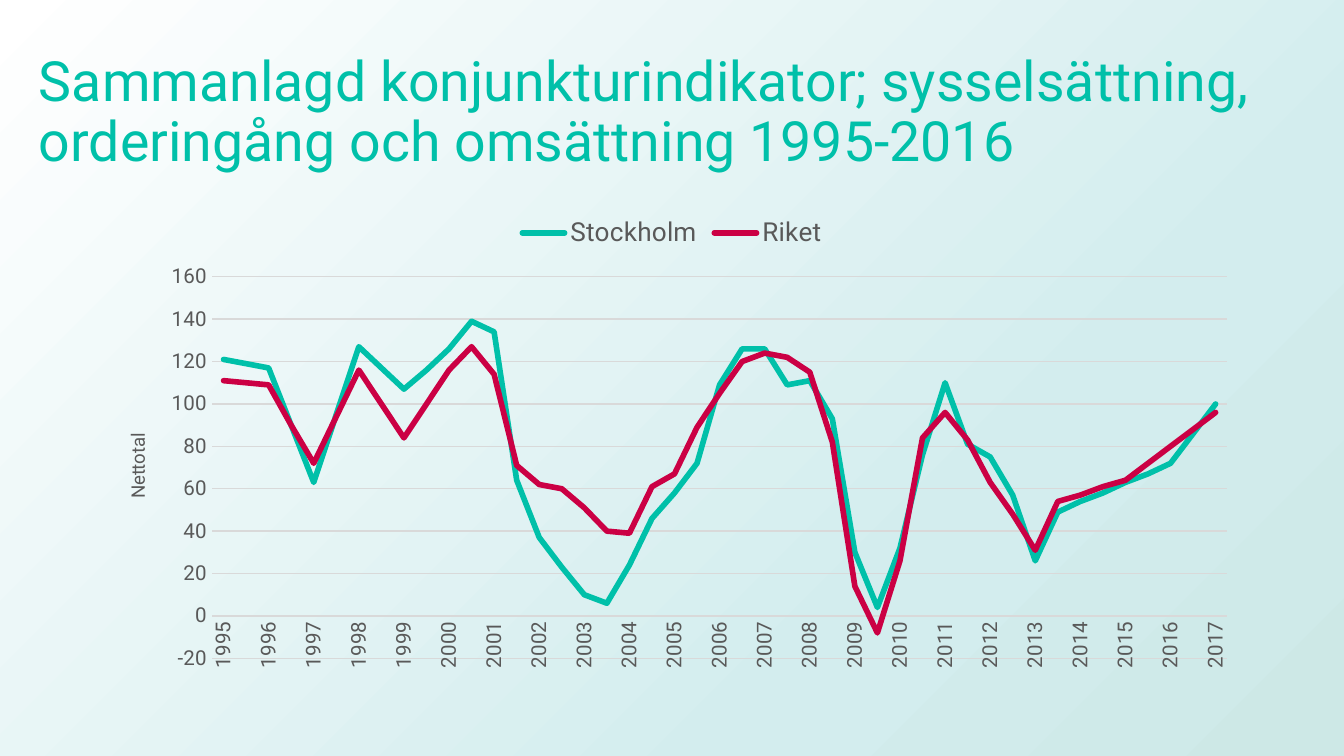
from copy import deepcopy
from dataclasses import dataclass

from pptx import Presentation
from pptx.chart.data import CategoryChartData
from pptx.dml.color import RGBColor
from pptx.enum.chart import XL_CHART_TYPE as ChartType
from pptx.enum.chart import XL_LEGEND_POSITION as LegendPosition
from pptx.enum.chart import XL_TICK_MARK as TickMark
from pptx.enum.text import MSO_ANCHOR as Anchor
from pptx.enum.text import MSO_AUTO_SIZE as AutoSize
from pptx.enum.text import PP_ALIGN as Align
from pptx.oxml import parse_xml
from pptx.oxml.ns import nsdecls, qn
from pptx.util import Inches, Pt


@dataclass(frozen=True)
class Theme:
    """Colours, font and type sizes of the slide."""
    font: str = "Roboto"
    teal: str = "00C0A9"
    crimson: str = "CB0044"
    label: str = "595959"
    grid: str = "D9D9D9"
    backdrop: tuple = ((0, "FFFFFF"), (0.7, "D3EDEE"), (1, "CDE8E6"))
    title_size: float = 29.7
    legend_size: float = 14
    tick_size: float = 11
    axis_title_size: float = 10
    rule: float = 0.75
    curve: float = 3


THEME = Theme()
WIDTH = Inches(10)
HEIGHT = WIDTH * 9 // 16
CHART_WIDTH, CHART_HEIGHT = 8.62, 3.56
TITLE = ("Sammanlagd konjunkturindikator; sysselsättning, "
         "orderingång och omsättning 1995-2016")
STOCKHOLM = (121, 119, 117, 90, 63, 95, 127, 117, 107, 116, 126, 139, 134, 64, 37,
             23, 10, 6, 24, 46, 58, 72, 109, 126, 126, 109, 111, 93, 30, 4,
             32, 76, 110, 81, 75, 57, 26, 49, 54, 58, 63, 67, 72, 86, 100)
RIKET = (111, 110, 109, 90, 72, 94, 116, 100, 84, 100, 116, 127, 114, 71, 62,
         60, 51, 40, 39, 61, 67, 89, 105, 120, 124, 122, 115, 82, 14, -8,
         26, 84, 96, 83, 63, 48, 31, 54, 57, 61, 64, 72, 80, 88, 96)
CURVES = (("Stockholm", STOCKHOLM, THEME.teal), ("Riket", RIKET, THEME.crimson))
READINGS_PER_YEAR = 2
UPRIGHT = "-5400000"


def box(left, top, width, height):
    """Turn lengths in tenths of the slide width into a position and size."""
    return tuple(int(length * WIDTH / 10) for length in (left, top, width, height))


def style_font(font, size, color):
    """Apply the theme font with a size and colour."""
    font.name, font.size, font.bold = THEME.font, Pt(size), False
    font.color.rgb = RGBColor.from_string(color)


def style_line(line, width, color):
    """Give a line a width and a solid colour."""
    line.width = Pt(width)
    line.color.rgb = RGBColor.from_string(color)


def paint_background(slide):
    """Fill the slide with a diagonal gradient."""
    fill = slide.background.fill
    fill.gradient()
    fill.gradient_angle = 315
    first_stop = slide.element.xpath(".//a:gsLst/a:gs")[0]
    first_stop.addnext(deepcopy(first_stop))
    for stop, (position, color) in zip(fill.gradient_stops, THEME.backdrop):
        stop.position = position
        stop.color.rgb = RGBColor.from_string(color)


def write_title(slide):
    """Place and format the slide title."""
    title = slide.shapes.title
    title.left, title.top, title.width, title.height = box(0.19, 0.3, 10.02, 1.09)
    frame = title.text_frame
    frame.text = TITLE
    frame.word_wrap = True
    frame.auto_size = AutoSize.NONE
    frame.vertical_anchor = Anchor.MIDDLE
    heading = frame.paragraphs[0]
    heading.alignment = Align.LEFT
    heading.line_spacing = 0.9
    style_font(heading.font, THEME.title_size, THEME.teal)


def set_layout(parent, index, inner=False, **shares):
    """Fix a chart part at shares of the chart area."""
    old = parent.find(qn("c:layout"))
    if old is not None:
        parent.remove(old)
    target = '<c:layoutTarget val="inner"/>' if inner else ""
    modes = '<c:xMode val="edge"/><c:yMode val="edge"/>'
    values = "".join(f'<c:{key} val="{share:.4f}"/>' for key, share in shares.items())
    parent.insert(index, parse_xml(
        f'<c:layout {nsdecls("c")}><c:manualLayout>{target}{modes}{values}'
        "</c:manualLayout></c:layout>"))


def format_years(chart):
    """Show each year once, upright, along the zero line."""
    years = chart.category_axis
    years.major_tick_mark = years.minor_tick_mark = TickMark.NONE
    style_font(years.tick_labels.font, THEME.tick_size, THEME.label)
    style_line(years.format.line, THEME.rule, THEME.grid)
    axis = chart.element.xpath(".//c:catAx")[0]
    axis.xpath("./c:txPr/a:bodyPr")[0].set("rot", UPRIGHT)
    last = axis.find(qn("c:noMultiLvlLbl"))
    for tag in ("tickLblSkip", "tickMarkSkip"):
        last.addprevious(parse_xml(
            f'<c:{tag} {nsdecls("c")} val="{READINGS_PER_YEAR}"/>'))


def format_net_totals(chart):
    """Set the scale, gridlines and title of the value axis."""
    totals = chart.value_axis
    totals.minimum_scale, totals.maximum_scale, totals.major_unit = -20, 160, 20
    totals.major_tick_mark = totals.minor_tick_mark = TickMark.NONE
    totals.format.line.fill.background()
    style_line(totals.major_gridlines.format.line, THEME.rule, THEME.grid)
    labels = totals.tick_labels
    labels.number_format, labels.number_format_is_linked = "0", False
    style_font(labels.font, THEME.tick_size, THEME.label)
    caption = totals.axis_title.text_frame
    caption.text = "Nettotal"
    style_font(caption.paragraphs[0].font, THEME.axis_title_size, THEME.label)
    title = chart.element.xpath(".//c:valAx/c:title")[0]
    title.xpath(".//a:bodyPr")[0].set("rot", UPRIGHT)
    set_layout(title, 1, x=0.22 / CHART_WIDTH, y=1.7 / CHART_HEIGHT)


def format_curves(chart):
    """Colour the curves and round their ends."""
    for curve, (_, _, color) in zip(chart.plots[0].series, CURVES):
        curve.smooth = False
        style_line(curve.format.line, THEME.curve, color)
    for outline in chart.element.xpath(".//c:ser/c:spPr/a:ln"):
        outline.set("cap", "rnd")


def add_indicator_chart(slide):
    """Add the line chart comparing Stockholm with the country."""
    figures = CategoryChartData(number_format="0")
    figures.categories = [str(1995 + reading // READINGS_PER_YEAR)
                          for reading in range(len(STOCKHOLM))]
    for name, values, _ in CURVES:
        figures.add_series(name, values)
    chart = slide.shapes.add_chart(
        ChartType.LINE, *box(0.69, 1.5, CHART_WIDTH, CHART_HEIGHT), figures).chart
    chart.has_title = False
    chart.plots[0].vary_by_categories = False
    style_font(chart.font, THEME.axis_title_size, THEME.label)
    chart.has_legend = True
    chart.legend.position = LegendPosition.TOP
    chart.legend.include_in_layout = False
    style_font(chart.legend.font, THEME.legend_size, THEME.label)
    format_years(chart)
    format_net_totals(chart)
    format_curves(chart)
    plot_area = chart.element.xpath(".//c:plotArea")[0]
    set_layout(plot_area, 0, inner=True,
               x=0.89 / CHART_WIDTH, y=0.56 / CHART_HEIGHT,
               w=7.55 / CHART_WIDTH, h=2.84 / CHART_HEIGHT)


def main():
    """Build and save the slide."""
    deck = Presentation()
    deck.slide_width, deck.slide_height = WIDTH, HEIGHT
    slide = deck.slides.add_slide(deck.slide_layouts.get_by_name("Title Only"))
    paint_background(slide)
    write_title(slide)
    add_indicator_chart(slide)
    deck.save("out.pptx")


if __name__ == "__main__":
    main()
